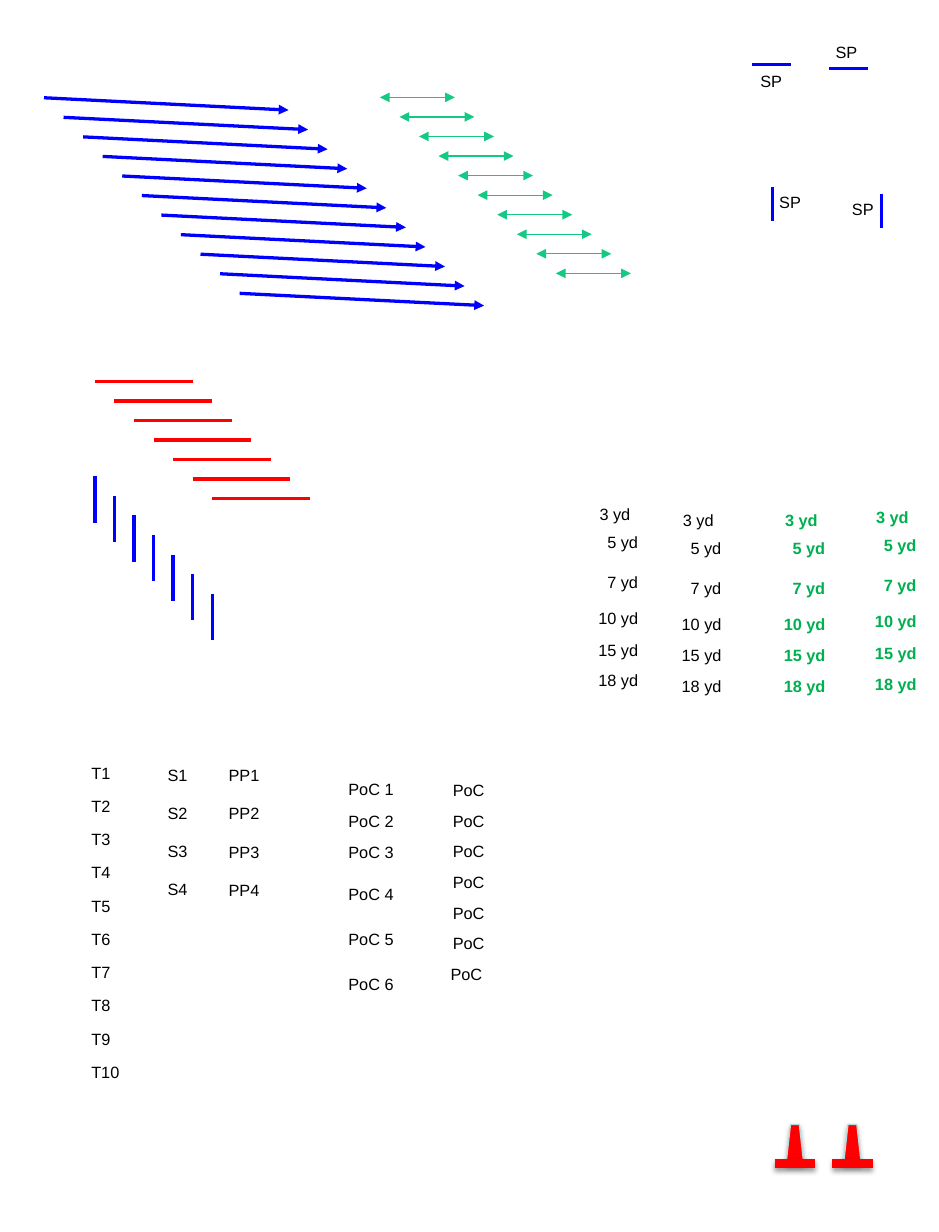
import collections
import itertools

import lxml.etree
import pptx
import pptx.dml.color
import pptx.enum.shapes
import pptx.enum.text
import pptx.oxml.ns
import pptx.util

COLUMNS, ROWS = 48, 63
CELL = pptx.util.Inches(8) / COLUMNS
BLACK = pptx.dml.color.RGBColor(0x00, 0x00, 0x00)
BLUE = pptx.dml.color.RGBColor(0x00, 0x00, 0xFF)
RED = pptx.dml.color.RGBColor(0xFF, 0x00, 0x00)
MINT = pptx.dml.color.RGBColor(0x13, 0xC9, 0x84)
GREEN = pptx.dml.color.RGBColor(0x00, 0xB0, 0x50)
PALE_TEAL = pptx.dml.color.RGBColor(0xB6, 0xDC, 0xDF)
LABEL_ROW = 1.62

Box = collections.namedtuple("Box", "left top width height")


def cells(*counts):
    return [round(count * CELL) for count in counts]


def add_xml(parent, tag, **attributes):
    return lxml.etree.SubElement(parent, pptx.oxml.ns.qn(tag), attributes)


def add_shadow(effects, distance, opacity):
    shadow = add_xml(effects, "a:outerShdw", blurRad="40000", dist=str(distance),
                     dir="5400000", rotWithShape="0")
    shade = add_xml(shadow, "a:srgbClr", val="000000")
    add_xml(shade, "a:alpha", val=str(opacity * 1000))


def add_line(shapes, box, color, weight=2, arrows=()):
    left, top, width, height = box
    line = shapes.add_connector(pptx.enum.shapes.MSO_CONNECTOR.STRAIGHT,
                                *cells(left, top, left + width, top + height))
    line.line.color.rgb = color
    line.line.width = pptx.util.Pt(weight)
    outline = line.line._get_or_add_ln()
    for end in arrows:
        add_xml(outline, end, type="triangle")
    return add_xml(line.element.spPr, "a:effectLst")


def add_label(shapes, box, words, color=BLACK, bold=False):
    label = shapes.add_textbox(*cells(*box))
    frame = label.text_frame
    frame.word_wrap = False
    frame.auto_size = pptx.enum.text.MSO_AUTO_SIZE.SHAPE_TO_FIT_TEXT
    run = frame.paragraphs[0].add_run()
    run.text = words
    run.font.name = "Arial"
    run.font.size = pptx.util.Pt(10)
    run.font.bold = bold
    run.font.color.rgb = color


def add_cone(slide, box):
    cone = slide.shapes.add_group_shape().shapes
    body_width = 0.9
    body = cone.add_shape(
        pptx.enum.shapes.MSO_SHAPE.TRAPEZOID,
        *cells(box.left + (box.width - body_width) / 2, box.top, body_width, box.height))
    body.fill.solid()
    body.fill.fore_color.rgb = RED
    body.line.color.rgb = PALE_TEAL
    body.line.width = pptx.util.Pt(0.75)
    body.shadow.inherit = False
    add_shadow(body.element.spPr.find(pptx.oxml.ns.qn("a:effectLst")), 23000, 35)
    base = Box(box.left, box.top + box.height, box.width, 0)
    add_shadow(add_line(cone, base, RED, 6), 20000, 38)


def add_staircase(slide, first, count, color, weight=2, arrows=()):
    for step in range(count):
        stair = first._replace(left=first.left + step, top=first.top + step)
        add_line(slide.shapes, stair, color, weight, arrows)


def add_label_column(slide, box, labels, offsets):
    for words, offset in zip(labels, offsets):
        place = box._replace(top=box.top + offset)
        add_label(slide.shapes, place, words)


def add_yard_column(slide, box, color=BLACK, bold=False):
    offsets = (0, 1.44, 3.45, 5.32, 6.92, 8.5)
    for yards, offset in zip((3, 5, 7, 10, 15, 18), offsets):
        width = box.width if yards >= 10 else box.width - 0.45
        outdent = 0.39 if yards == 3 else 0
        place = Box(box.left + box.width - width - outdent, box.top + offset,
                    width, box.height)
        add_label(slide.shapes, place, f"{yards} yd", color, bold)


def add_start_point(shapes, mark, label_left, label_top):
    add_line(shapes, mark, BLUE)
    add_label(shapes, Box(label_left, label_top, 2.34, LABEL_ROW), "SP")


def add_start_points(slide):
    add_start_point(slide.shapes, Box(38.46, 3.3, 2, 0), 38.28, 3.36)
    add_start_point(slide.shapes, Box(42.38, 3.5, 2, 0), 42.12, 1.86)
    for mark_left, label_left, top in ((39.48, 39.24, 9.54), (45.06, 42.96, 9.9)):
        group = slide.shapes.add_group_shape()
        add_start_point(group.shapes, Box(mark_left, top, 0, 1.74), label_left, top)


def add_target_columns(slide):
    add_label_column(slide, Box(4.08, 38.72, 2.28, 1.7),
                     [f"T{n}" for n in range(1, 10)], itertools.count(0, 1.7))
    add_label(slide.shapes, Box(4.08, 54, 2.76, 1.7), "T10")
    for prefix, left, width, pitch in (("S", 7.98, 2.22, 1.94), ("PP", 11.1, 2.76, 1.96)):
        add_label_column(slide, Box(left, 38.84, width, LABEL_ROW),
                         [f"{prefix}{n}" for n in range(1, 5)], itertools.count(0, pitch))


def add_contact_columns(slide):
    add_label_column(slide, Box(17.22, 39.54, 3.54, LABEL_ROW),
                     [f"PoC {n}" for n in range(1, 7)], (0, 1.66, 3.24, 5.4, 7.68, 9.96))
    add_label_column(slide, Box(22.56, 39.6, 3.06, LABEL_ROW),
                     ["PoC"] * 6, itertools.count(0, 1.57))
    add_label(slide.shapes, Box(22.44, 49.02, 3.06, LABEL_ROW), "PoC")


def main():
    deck = pptx.Presentation()
    deck.slide_width, deck.slide_height = cells(COLUMNS, ROWS)
    slide = deck.slides.add_slide(deck.slide_layouts[6])

    for cone_left in (42.54, 39.6):
        add_cone(slide, Box(cone_left, 57.5, 2.07, 2))
    add_target_columns(slide)
    add_contact_columns(slide)
    add_staircase(slide, Box(2.25, 5, 12.5, 0.63), 11, BLUE, arrows=("a:tailEnd",))
    add_staircase(slide, Box(19.42, 4.98, 3.83, 0), 10, MINT, 0.75,
                  ("a:headEnd", "a:tailEnd"))
    add_staircase(slide, Box(4.85, 19.5, 5, 0), 7, RED)
    add_staircase(slide, Box(4.85, 24.36, 0, 2.36), 7, BLUE)
    for left, top in ((30, 25.5), (34.26, 25.8)):
        add_yard_column(slide, Box(left, top, 3.24, LABEL_ROW))
    for left, top in ((39.48, 25.8), (44.14, 25.66)):
        add_yard_column(slide, Box(left, top, 3.36, LABEL_ROW), GREEN, True)
    add_start_points(slide)

    deck.save("out.pptx")


if __name__ == "__main__":
    main()
